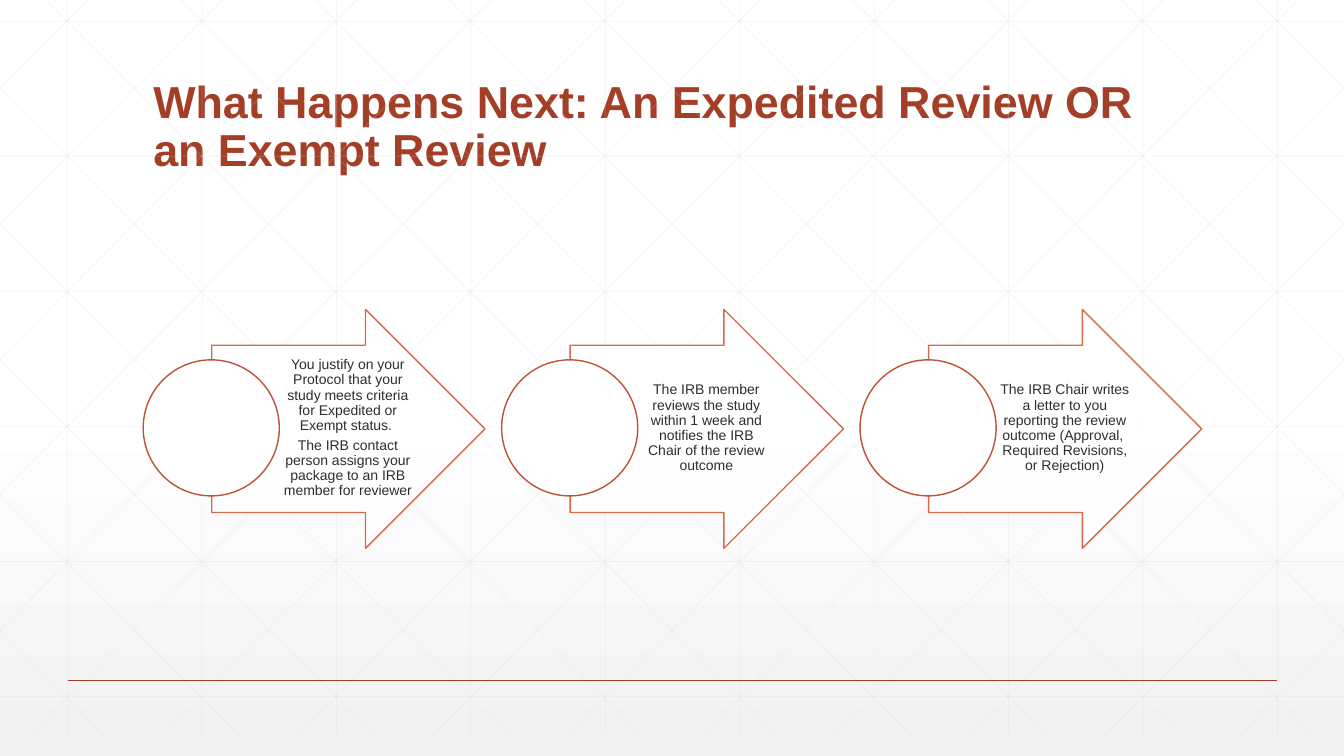
from copy import deepcopy
from dataclasses import dataclass

from lxml import etree
from pptx import Presentation
from pptx.dml.color import RGBColor
from pptx.enum.shapes import MSO_CONNECTOR, MSO_SHAPE
from pptx.enum.text import MSO_ANCHOR, MSO_AUTO_SIZE, PP_ALIGN
from pptx.oxml.ns import qn
from pptx.slide import Slide
from pptx.util import Inches, Pt

STRAIGHT = MSO_CONNECTOR.STRAIGHT
ARROW, OVAL = MSO_SHAPE.RIGHT_ARROW, MSO_SHAPE.OVAL
LEFT, CENTER = PP_ALIGN.LEFT, PP_ALIGN.CENTER
MIDDLE, BOTTOM = MSO_ANCHOR.MIDDLE, MSO_ANCHOR.BOTTOM
NO_AUTOFIT = MSO_AUTO_SIZE.NONE

WHITE = RGBColor(0xFF, 0xFF, 0xFF)
PALE_GREY = RGBColor(0xF2, 0xF2, 0xF2)
GRID_GREY = RGBColor(0xD9, 0xD9, 0xD9)
RUST = RGBColor(0xA4, 0x3F, 0x27)
ARROW_RED = RGBColor(0xD1, 0x5A, 0x3E)
CIRCLE_RED = RGBColor(0xBE, 0x52, 0x38)
INK = RGBColor(0x2D, 0x2E, 0x2D)

FONT = "Arial"
WIDTH, HEIGHT = 13.33, 7.5
GRID_TOP, GRID_BOTTOM = -0.21, 7.29
GRID_STEP = 4 / 3
DIAGONAL_RUN = 7.45
STEP_LEFT, STEP_PITCH = 1.42, 3.555


@dataclass
class Step:
    paragraphs: list[str]


@dataclass
class Segment:
    x1: float
    y1: float
    x2: float
    y2: float

    def mirrored(self) -> "Segment":
        return Segment(WIDTH - self.x1, self.y1, WIDTH - self.x2, self.y2)


STEPS = [
    Step(["You justify on your Protocol that your study meets criteria for "
          "Expedited or Exempt status. ",
          "The IRB contact person assigns your package to an IRB member for reviewer"]),
    Step(["The IRB member reviews the study within 1 week and notifies the IRB "
          "Chair of the review outcome"]),
    Step(["The IRB Chair writes a letter to you reporting the review outcome "
          "(Approval,  Required Revisions, or Rejection)"]),
]


def set_alpha(fill_parent, percent: int) -> None:
    color = fill_parent.find(".//" + qn("a:srgbClr"))
    etree.SubElement(color, qn("a:alpha")).set("val", str(percent * 1000))


def paint_background(s: Slide) -> None:
    fill = s.background.fill
    fill.gradient()
    fill.gradient_angle = 270
    stops = s.element.find(".//" + qn("a:gsLst"))
    stops.append(deepcopy(stops[-1]))
    colors = [(0, WHITE), (0.53, WHITE), (1, PALE_GREY)]
    for stop, (position, color) in zip(fill.gradient_stops, colors):
        stop.position = position
        stop.color.rgb = color


def add_line(s: Slide, seg: Segment, color: RGBColor, width: float,
             alpha: int = 100) -> None:
    line = s.shapes.add_connector(STRAIGHT, Inches(seg.x1), Inches(seg.y1),
                                  Inches(seg.x2), Inches(seg.y2))
    line.line.color.rgb = color
    line.line.width = Pt(width)
    sp_pr = line.element.spPr
    if alpha < 100:
        set_alpha(sp_pr.find(qn("a:ln")), alpha)
    etree.SubElement(sp_pr, qn("a:effectLst"))


def diagonal(top_x: float) -> Segment:
    slope = (GRID_BOTTOM - GRID_TOP) / DIAGONAL_RUN
    x1 = max(top_x, 0)
    x2 = min(top_x + DIAGONAL_RUN, WIDTH)
    return Segment(x1, GRID_TOP + (x1 - top_x) * slope,
                   x2, GRID_TOP + (x2 - top_x) * slope)


def grid_segments() -> list[Segment]:
    columns = [0.67 + i * GRID_STEP for i in range(10)]
    rows = [0.21 + i * 1.34 for i in range(6)]
    diagonals = [diagonal(0.25 + i * GRID_STEP) for i in range(-5, 10)]
    return ([Segment(x, GRID_TOP, x, GRID_BOTTOM) for x in columns]
            + [Segment(0, y, WIDTH, y) for y in rows]
            + diagonals + [d.mirrored() for d in diagonals])


def add_outlined(s: Slide, kind: MSO_SHAPE, x: float, y: float, w: float,
                 h: float, color: RGBColor, alpha: int = 100) -> None:
    sp = s.shapes.add_shape(kind, Inches(x), Inches(y), Inches(w), Inches(h))
    sp.shadow.inherit = False
    sp.fill.solid()
    sp.fill.fore_color.rgb = WHITE
    sp.line.color.rgb = color
    sp.line.width = Pt(1)
    if kind == ARROW:
        sp.adjustments[0], sp.adjustments[1] = 0.7, 0.5
    if alpha < 100:
        sp_pr = sp.element.spPr
        set_alpha(sp_pr.find(qn("a:solidFill")), alpha)
        set_alpha(sp_pr.find(qn("a:ln")), alpha)


def add_step(s: Slide, step: Step, x: float) -> None:
    add_outlined(s, ARROW, x + 0.68, 3.07, 2.71, 2.37, ARROW_RED, 90)
    box = s.shapes.add_textbox(Inches(x + 1.36), Inches(3.42), Inches(1.32), Inches(1.66))
    tf = box.text_frame
    tf.word_wrap = True
    tf.vertical_anchor = MIDDLE
    tf.margin_left = Inches(0.03)
    tf.margin_top = tf.margin_right = tf.margin_bottom = Inches(0.01)
    tf.text = "\n".join(step.paragraphs)
    for p in tf.paragraphs:
        p.alignment = CENTER
        p.line_spacing = 0.9
        p.space_after = Pt(3.5)
        font = p.runs[0].font
        font.name, font.size = FONT, Pt(10)
        font.color.rgb = INK
    add_outlined(s, OVAL, x, 3.57, 1.35, 1.35, CIRCLE_RED)


def add_title(s: Slide, text: str) -> None:
    title = s.shapes.title
    title.left, title.top = Inches(1.42), Inches(0.55)
    title.width, title.height = Inches(10.5), Inches(1.25)
    tf = title.text_frame
    tf.text = text
    tf.word_wrap = True
    tf.auto_size = NO_AUTOFIT
    tf.vertical_anchor = BOTTOM
    p = tf.paragraphs[0]
    p.alignment = LEFT
    p.line_spacing = 0.9
    font = p.runs[0].font
    font.name, font.size, font.bold = FONT, Pt(32), True
    font.color.rgb = RUST


def main() -> None:
    prs = Presentation()
    prs.slide_width, prs.slide_height = Inches(WIDTH), Inches(HEIGHT)
    s = prs.slides.add_slide(prs.slide_layouts[5])
    paint_background(s)
    for seg in grid_segments():
        add_line(s, seg, GRID_GREY, 0.5, 25)
    add_line(s, Segment(0.67, 6.75, 12.67, 6.75), RUST, 1)
    add_title(s, "What Happens Next: An Expedited Review OR an Exempt Review")
    for i, step in enumerate(STEPS):
        add_step(s, step, STEP_LEFT + i * STEP_PITCH)
    prs.save("out.pptx")


if __name__ == "__main__":
    main()
